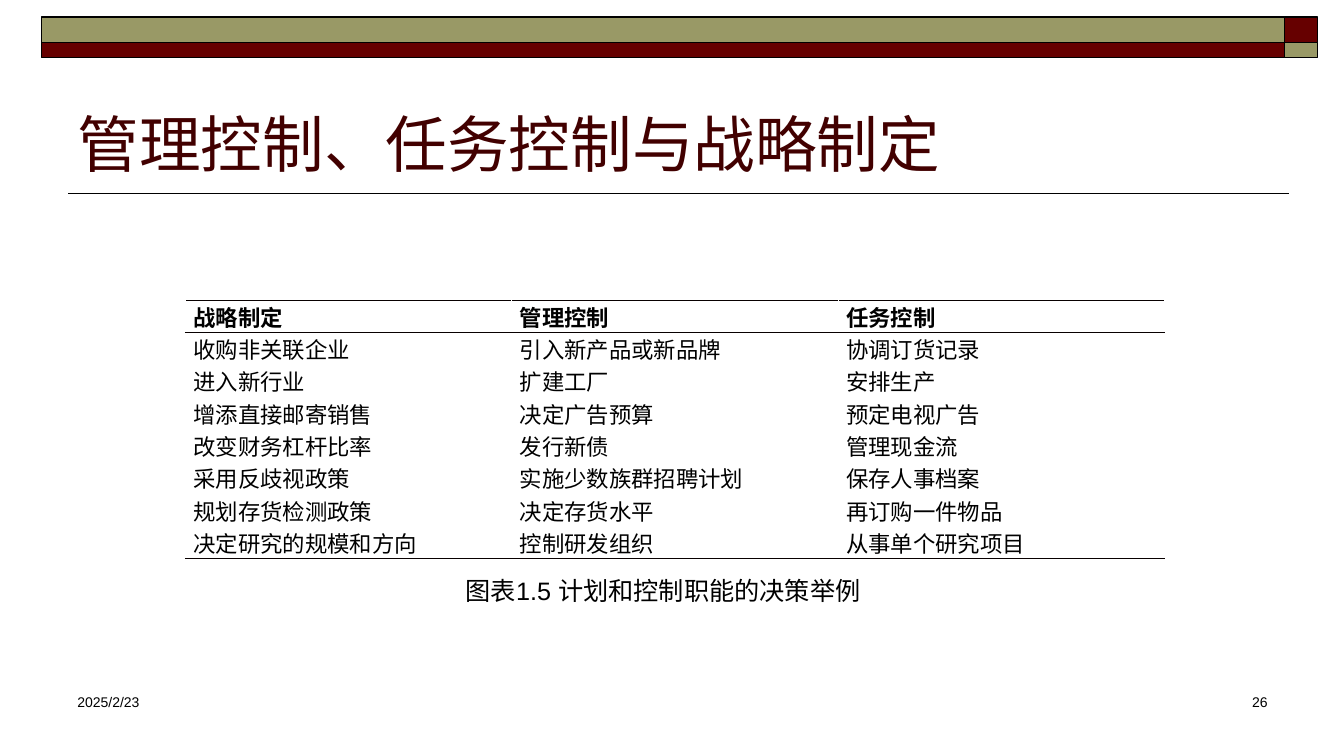
from typing import NamedTuple

from lxml.etree import SubElement
from pptx import Presentation
from pptx.dml.color import RGBColor as Rgb
from pptx.enum.shapes import MSO_CONNECTOR as Conn, MSO_SHAPE as Shape
from pptx.enum.text import MSO_ANCHOR as Anchor, PP_ALIGN as Align
from pptx.oxml import parse_xml
from pptx.oxml.ns import nsdecls, qn
from pptx.util import Inches, Pt

HUES = {"ink": "000000", "title": "420000", "red": "660000",
        "olive": "999966", "rule": "080000"}
CJK = "Noto Sans CJK SC"
ROWS = [
    ("战略制定", "管理控制", "任务控制"),
    ("收购非关联企业", "引入新产品或新品牌", "协调订货记录"),
    ("进入新行业", "扩建工厂", "安排生产"),
    ("增添直接邮寄销售", "决定广告预算", "预定电视广告"),
    ("改变财务杠杆比率", "发行新债", "管理现金流"),
    ("采用反歧视政策", "实施少数族群招聘计划", "保存人事档案"),
    ("规划存货检测政策", "决定存货水平", "再订购一件物品"),
    ("决定研究的规模和方向", "控制研发组织", "从事单个研究项目"),
]


class Box(NamedTuple):
    left: float
    top: float
    width: float
    height: float

    def size(self) -> list:
        return [Inches(n) for n in self]


class Bar(NamedTuple):
    box: Box
    hue: str


class Note(NamedTuple):
    box: Box
    text: str
    size: int
    align: Align = Align.LEFT


BARS = [
    Bar(Box(12.74, 0.17, 0.33, 0.25), "red"),
    Bar(Box(0.41, 0.17, 12.33, 0.25), "olive"),
    Bar(Box(0.41, 0.42, 12.33, 0.15), "red"),
    Bar(Box(12.74, 0.42, 0.33, 0.15), "olive"),
]
NOTES = [
    Note(Box(0.67, 6.83, 2.44, 0.5), "2025/2/23", 10),
    Note(Box(9.89, 6.83, 2.78, 0.5), "26", 10, Align.RIGHT),
    Note(Box(4.52, 5.66, 4.53, 0.4), "图表1.5 计划和控制职能的决策举例", 18),
]


def tint(name: str) -> Rgb:
    return Rgb.from_string(HUES[name])


def write(frame, text: str, *, size: int, font: str = "Arial", hue: str = "ink",
          bold: bool = False, align: Align = Align.LEFT) -> None:
    para = frame.paragraphs[0]
    para.alignment = align
    run = para.add_run()
    run.text = text
    run.font.size, run.font.name, run.font.bold = Pt(size), font, bold
    run.font.color.rgb = tint(hue)
    SubElement(run.font._element, qn("a:ea"), typeface=CJK)


def draw_bar(slide, bar: Bar) -> None:
    rect = slide.shapes.add_shape(Shape.RECTANGLE, *bar.box.size())
    rect.shadow.inherit = False
    rect.fill.solid()
    rect.fill.fore_color.rgb = tint(bar.hue)
    rect.line.color.rgb, rect.line.width = tint("ink"), Pt(1)


def draw_rule(slide) -> None:
    rule = slide.shapes.add_connector(
        Conn.STRAIGHT, Inches(12.78), Inches(1.92), Inches(0.67), Inches(1.92))
    rule.line.color.rgb, rule.line.width = tint("ink"), Pt(1)
    SubElement(rule._element.spPr, qn("a:effectLst"))


def draw_note(slide, note: Note) -> None:
    frame = slide.shapes.add_textbox(*note.box.size()).text_frame
    frame.word_wrap = True
    write(frame, note.text, size=note.size, align=note.align)


def set_title(slide, text: str) -> None:
    title = slide.shapes.title
    title.left, title.top, title.width, title.height = Box(0.67, 0.58, 12, 1.25).size()
    title.text_frame.vertical_anchor = Anchor.BOTTOM
    write(title.text_frame, text, size=44, font=CJK, hue="title")


def edge(cell, sides: list[str]) -> None:
    """Give the cell a thin line on each named side."""
    for spot, side in enumerate(sides):
        line = parse_xml(
            f'<a:{side} {nsdecls("a")} w="{Pt(1)}"><a:solidFill>'
            f'<a:srgbClr val="{HUES["rule"]}"/></a:solidFill></a:{side}>')
        cell._tc.get_or_add_tcPr().insert(spot, line)


def draw_table(slide, box: Box) -> None:
    last = len(ROWS) - 1
    table = slide.shapes.add_table(len(ROWS), len(ROWS[0]), *box.size()).table
    table.first_row = table.horz_banding = False
    for r, row in enumerate(ROWS):
        for c, text in enumerate(row):
            cell = table.cell(r, c)
            cell.margin_left = cell.margin_right = Inches(0.08)
            cell.margin_top = cell.margin_bottom = 0
            cell.fill.background()
            write(cell.text_frame, text, size=16, font=CJK, bold=r == 0)
            # Lines above and below the head, and below the last row
            sides = ["lnT"] if r < 2 else []
            edge(cell, sides + (["lnB"] if r in (0, last) else []))


def main() -> None:
    deck = Presentation()
    deck.slide_width, deck.slide_height = Inches(13.33), Inches(7.5)
    slide = deck.slides.add_slide(deck.slide_layouts[5])

    # Head band and rule
    draw_rule(slide)
    for bar in BARS:
        draw_bar(slide, bar)

    # Title, table and notes
    set_title(slide, "管理控制、任务控制与战略制定")
    draw_table(slide, Box(1.84, 2.98, 9.71, 2.15))
    for note in NOTES:
        draw_note(slide, note)
    deck.save("out.pptx")


if __name__ == "__main__":
    main()
